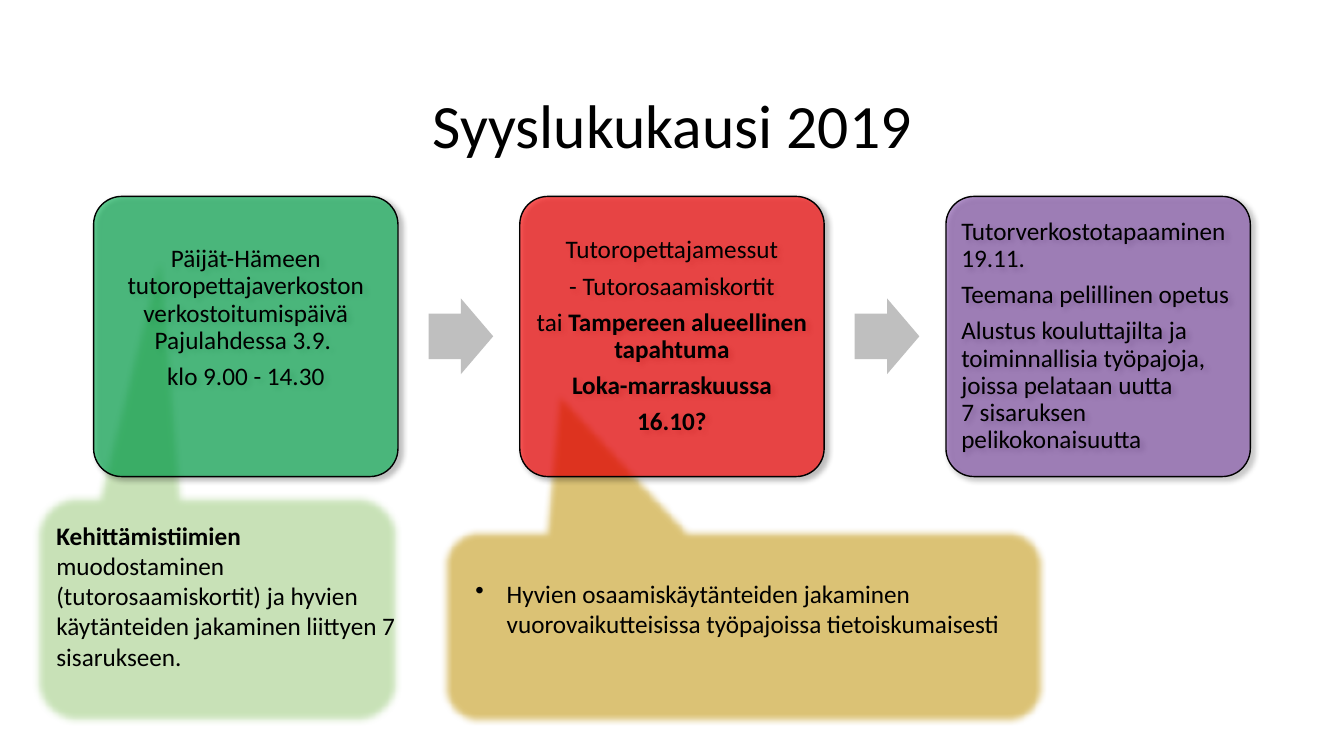
import pptx
import pptx.util
import pptx.dml.color
import pptx.enum.shapes
import pptx.enum.text
import pptx.oxml
import pptx.oxml.ns
from pptx.util import Cm

RGBColor = pptx.dml.color.RGBColor
SHAPE = pptx.enum.shapes.MSO_SHAPE
ALIGN = pptx.enum.text.PP_ALIGN
ANCHOR = pptx.enum.text.MSO_ANCHOR

BLACK = RGBColor(0x00, 0x00, 0x00)
GREEN = RGBColor(0x00, 0xB0, 0x50)
RED = RGBColor(0xFF, 0x00, 0x00)
PURPLE = RGBColor(0x70, 0x30, 0xA0)
GRAY = RGBColor(0xBF, 0xBF, 0xBF)
LIGHT_GREEN = RGBColor(0xA9, 0xD1, 0x8E)
GOLD = RGBColor(0xBF, 0x90, 0x00)

SHADOW = ('<a:outerShdw %s blurRad="50800" dist="38100" dir="2700000" algn="tl" rotWithShape="0">'
          '<a:srgbClr val="000000"><a:alpha val="40000"/></a:srgbClr></a:outerShdw>')
SOFT_EDGE = '<a:softEdge %s rad="63500"/>'
ALPHA = '<a:alpha %s val="{}"/>'
BULLET = '<a:buChar %s char="•"/>'

STEP_PITCH = 10.74
STEPS = [
    (GREEN, 61, ALIGN.CENTER, 1.1, [
        [("Päijät-Hämeen tutoropettajaverkoston verkostoitumispäivä Pajulahdessa 3.9. ", False)],
        [("klo 9.00 - 14.30", False)],
    ]),
    (RED, 64, ALIGN.CENTER, 0.18, [
        [("Tutoropettajamessut", False)],
        [("- Tutorosaamiskortit", False)],
        [("tai ", False), ("Tampereen alueellinen tapahtuma", True)],
        [("Loka-marraskuussa", True)],
        [("16.10?", True)],
    ]),
    (PURPLE, 50, ALIGN.LEFT, 0.18, [
        [("Tutorverkostotapaaminen 19.11.", False)],
        [("Teemana pelillinen opetus", False)],
        [("Alustus kouluttajilta ja toiminnallisia työpajoja, joissa pelataan uutta"
          "\v7 sisaruksen pelikokonaisuutta", False)],
    ]),
]


def add_xml(parent, xml):
    parent.append(pptx.oxml.parse_xml(xml % pptx.oxml.ns.nsdecls("a")))


class SlideBuilder:
    font = "Calibri"
    body_size = 18
    title_size = 44

    def __init__(self, prs):
        self.slide = prs.slides.add_slide(prs.slide_layouts[5])

    def format_run(self, r, size, bold=False):
        r.font.name = self.font
        r.font.size = pptx.util.Pt(size)
        r.font.bold = bold
        r.font.color.rgb = BLACK

    def title(self, text, left, top, width, height):
        sp = self.slide.shapes.title
        sp.left, sp.top, sp.width, sp.height = Cm(left), Cm(top), Cm(width), Cm(height)
        tf = sp.text_frame
        tf.text = text
        tf.vertical_anchor = ANCHOR.MIDDLE
        p = tf.paragraphs[0]
        p.alignment = ALIGN.CENTER
        p.line_spacing = 0.9
        self.format_run(p.runs[0], self.title_size)

    def fill_text(self, tf, paragraphs, align=ALIGN.LEFT):
        tf.word_wrap = True
        for i, parts in enumerate(paragraphs):
            p = tf.add_paragraph() if i else tf.paragraphs[0]
            p.alignment = align
            p.text = parts[0][0]
            for r in p.runs:
                self.format_run(r, self.body_size, parts[0][1])
            for text, bold in parts[1:]:
                r = p.add_run()
                r.text = text
                self.format_run(r, self.body_size, bold)

    def shape(self, kind, left, top, width, height, color, adjustments, opacity=100, effect=None):
        sp = self.slide.shapes.add_shape(kind, Cm(left), Cm(top), Cm(width), Cm(height))
        for i, value in enumerate(adjustments):
            sp.adjustments[i] = value
        sp.fill.solid()
        sp.fill.fore_color.rgb = color
        sp.line.fill.background()
        sp.shadow.inherit = False
        sp_pr = sp._element.spPr
        if opacity < 100:
            add_xml(sp_pr.find(".//" + pptx.oxml.ns.qn("a:srgbClr")), ALPHA.format(opacity * 1000))
        if effect:
            add_xml(sp_pr.find(pptx.oxml.ns.qn("a:effectLst")), effect)
        return sp

    def callout(self, left, top, width, height, color, opacity, tip):
        sp = self.shape(SHAPE.ROUNDED_RECTANGULAR_CALLOUT, left, top, width, height,
                        color, (*tip, 0.167), opacity, SOFT_EDGE)
        sp.rotation = 180

    def step(self, left, color, opacity, align, bottom_inset, paragraphs):
        sp = self.shape(SHAPE.ROUNDED_RECTANGLE, left, 4.95, 7.67, 7.06,
                        color, (0.1,), opacity, SHADOW)
        sp.line.color.rgb = BLACK
        sp.line.width = pptx.util.Pt(1)
        tf = sp.text_frame
        tf.margin_left = tf.margin_right = tf.margin_top = Cm(0.18)
        tf.margin_bottom = Cm(bottom_inset)
        tf.vertical_anchor = ANCHOR.MIDDLE
        self.fill_text(tf, paragraphs, align)
        for p in tf.paragraphs:
            p.line_spacing = 0.9
            p.space_after = pptx.util.Pt(6.3)

    def arrow(self, left):
        self.shape(SHAPE.RIGHT_ARROW, left, 7.52, 1.63, 1.91, GRAY, (0.6, 0.5))

    def text(self, left, top, width, height, paragraphs):
        sp = self.slide.shapes.add_textbox(Cm(left), Cm(top), Cm(width), Cm(height))
        self.fill_text(sp.text_frame, paragraphs)
        return sp.text_frame

    def bullet(self, p):
        p_pr = p._p.get_or_add_pPr()
        p_pr.set("marL", str(Cm(0.79)))
        p_pr.set("indent", str(-Cm(0.79)))
        add_xml(p_pr, BULLET)


def main():
    prs = pptx.Presentation()
    prs.slide_width, prs.slide_height = Cm(33.87), Cm(19.05)
    s = SlideBuilder(prs)

    s.callout(0.81, 12.42, 9.3, 5.87, LIGHT_GREEN, 63, (0.146, 1.689))
    s.callout(11.1, 13.28, 15.27, 5, GOLD, 54, (0.311, 1.244))
    s.title("Syyslukukausi 2019", 2.34, 1.4, 29.21, 3.68)

    for i, step in enumerate(STEPS):
        s.step(2.36 + i * STEP_PITCH, *step)
        if i < len(STEPS) - 1:
            s.arrow(10.8 + i * STEP_PITCH)

    tf = s.text(11.73, 13.67, 15.24, 4.11, [
        [("Hyvien osaamiskäytänteiden jakaminen vuorovaikutteisissa työpajoissa tietoiskumaisesti", False)],
    ])
    tf.margin_top = Cm(0.9)
    s.bullet(tf.paragraphs[0])

    s.text(1.17, 12.98, 9.12, 4.88, [
        [("Kehittämistiimien", True)],
        [("muodostaminen (tutorosaamiskortit) ja hyvien käytänteiden jakaminen liittyen 7 sisarukseen.", False)],
    ])

    prs.save("out.pptx")


if __name__ == "__main__":
    main()
